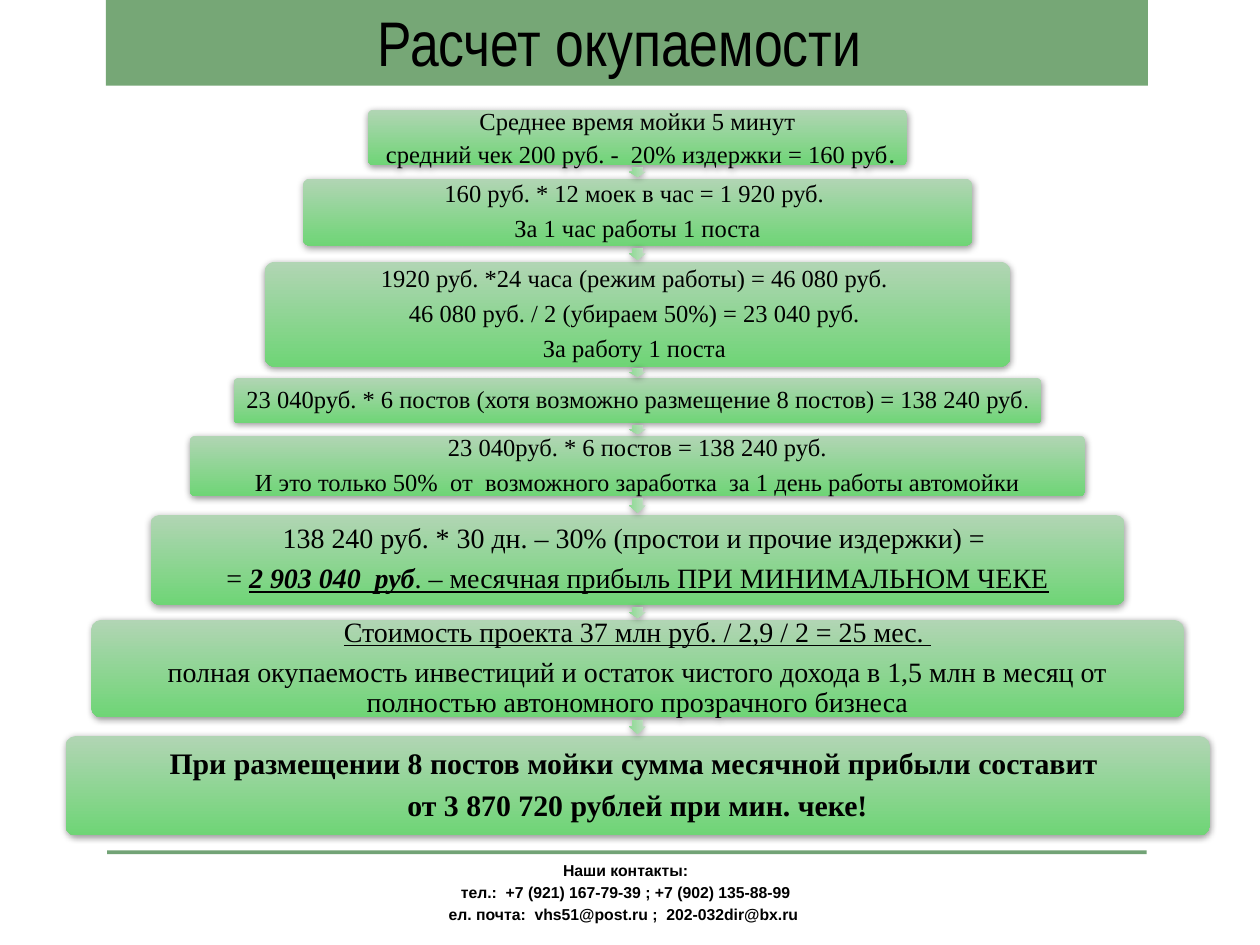
from lxml import etree
from pptx import Presentation
from pptx.dml.color import RGBColor
from pptx.enum.shapes import MSO_SHAPE
from pptx.enum.text import MSO_ANCHOR, MSO_AUTO_SIZE, PP_ALIGN
from pptx.oxml.ns import qn
from pptx.util import Inches, Pt

CENTER = PP_ALIGN.CENTER
MIDDLE, BOTTOM = MSO_ANCHOR.MIDDLE, MSO_ANCHOR.BOTTOM
NO_AUTOFIT = MSO_AUTO_SIZE.NONE
RECTANGLE, ROUNDED = MSO_SHAPE.RECTANGLE, MSO_SHAPE.ROUNDED_RECTANGLE
RIGHT_ARROW = MSO_SHAPE.RIGHT_ARROW

WIDTH, HEIGHT = Inches(10), Inches(7.5)
AXIS = 50.6  # centre of the pyramid, percent of the slide width
ARROW_BREADTH = 0.13  # inches
COLORS = {
    "text": "000000", "title": "76A776", "rule": "72A376",
    "step_top": "B1D5B4", "step_bottom": "6FD576",
    "arrow_top": "C2DDC4", "arrow_bottom": "8CDA92",
}
PLAIN = {}
UNDERLINED = {"underline": True}
BOLD = {"bold": True}
TOTAL = {"bold": True, "italic": True, "underline": True}

# top, height and width in percent of the slide; text size; paragraphs of runs
STEPS = [
    (11.6, 5.9, 42.8, 14, [
        [("Среднее время мойки 5 минут", PLAIN)],
        [(" средний чек 200 руб. -  20% издержки = 160 руб", PLAIN),
         (".", {"size": Pt(16)})]]),
    (18.9, 7.1, 53.1, 14, [
        [("160 руб. * 12 моек в час = 1 920 руб. ", PLAIN)],
        [("За 1 час работы 1 поста", PLAIN)]]),
    (27.7, 11.1, 59.2, 14, [
        [("1920 руб. *24 часа (режим работы) = 46 080 руб. ", PLAIN)],
        [("46 080 руб. / 2 (убираем 50%) = 23 040 руб. ", PLAIN)],
        [("За работу 1 поста ", PLAIN)]]),
    (40, 4.8, 64.1, 14, [
        [("23 040руб. * 6 постов (хотя возможно размещение 8 постов)"
          " = 138 240 руб", PLAIN), (".", {"size": Pt(11)})]]),
    (46.1, 6.4, 71.1, 14, [
        [("23 040руб. * 6 постов = 138 240 руб.", PLAIN)],
        [("И это только 50%  от  возможного заработка"
          "  за 1 день работы автомойки", PLAIN)]]),
    (54.5, 9.5, 77.3, 16, [
        [("138 240 руб. * 30 дн. – 30% (простои и прочие издержки) = ", PLAIN)],
        [("= ", PLAIN), ("2 903 040  руб", TOTAL),
         (". – месячная прибыль ПРИ МИНИМАЛЬНОМ ЧЕКЕ", UNDERLINED)]]),
    (65.6, 10.3, 86.7, 16, [
        [("Стоимость проекта 37 млн руб. / 2,9 / 2 = 25 мес. ", UNDERLINED)],
        [("полная окупаемость инвестиций и остаток чистого дохода в 1,5 млн"
          " в месяц от полностью автономного прозрачного бизнеса", PLAIN)]]),
    (77.9, 10.5, 90.8, 17, [
        [("При размещении 8 постов мойки сумма месячной прибыли составит ",
          BOLD)],
        [("от 3 870 720 рублей при мин. чеке!", BOLD)]]),
]
CONTACTS = [
    [("Наши контакты:", BOLD)],
    [("тел.:  +7 (921) 167-79-39 ; +7 (902) 135-88-99", BOLD)],
    [("ел. почта:  vhs51@post.ru ;  202-032dir@bx.ru ", BOLD)],
]


def color(name):
    return RGBColor.from_string(COLORS[name])


def share(left, top, width, height):
    """Turn percentages of the slide into lengths."""
    return [int(part * whole / 100) for part, whole in
            zip((left, top, width, height), (WIDTH, HEIGHT) * 2)]


def write(frame, paragraphs, font, size, line=None, before=0, after=0):
    """Fill a text frame with centred paragraphs of (text, format) runs."""
    frame.word_wrap = True
    for index, runs in enumerate(paragraphs):
        para = frame.paragraphs[0] if index == 0 else frame.add_paragraph()
        para.alignment = CENTER
        para.line_spacing = line
        para.space_before, para.space_after = Pt(before), Pt(after)
        for text, look in runs:
            span = para.add_run()
            span.text = text
            span.font.name, span.font.size = font, Pt(size)
            span.font.color.rgb = color("text")
            for name, value in look.items():
                setattr(span.font, name, value)


def add_glossy(page, preset, place, role):
    """Add a shape with a vertical gradient and a soft shadow."""
    shape = page.shapes.add_shape(preset, *place)
    shape.line.fill.background()
    shape.fill.gradient()
    shape.fill.gradient_angle = 270
    for stop, position, end in zip(shape.fill.gradient_stops, (0, 1),
                                   ("top", "bottom")):
        stop.position = position
        stop.color.rgb = color(f"{role}_{end}")
    shape.shadow.inherit = False
    effects = shape.element.spPr.find(qn("a:effectLst"))
    shadow = etree.SubElement(effects, qn("a:outerShdw"), blurRad=str(Pt(4)),
                              dist=str(Pt(1)), dir="5280000", rotWithShape="0")
    tint = etree.SubElement(shadow, qn("a:srgbClr"), val=COLORS["text"])
    etree.SubElement(tint, qn("a:alpha"), val="40000")
    return shape


def add_step(page, top, height, width, size, paragraphs, spaced):
    place = share(AXIS - width / 2, top, width, height)
    box = add_glossy(page, ROUNDED, place, "step")
    box.adjustments[0] = 0.1
    frame = box.text_frame
    frame.vertical_anchor = MIDDLE
    frame.margin_left = frame.margin_right = Pt(size * 0.3)
    frame.margin_top = frame.margin_bottom = Inches(0.02)
    spacing = {"line": 0.9, "after": size * 0.35} if spaced else {}
    write(frame, paragraphs, "Times New Roman", size, **spacing)


def add_arrow(page, start, end):
    """Point down in the gap between two heights given in percent."""
    length = int((end - start) * 0.75 * HEIGHT / 100)
    breadth = Inches(ARROW_BREADTH)
    center_x = int(AXIS * WIDTH / 100)
    center_y = int((start + end) / 2 * HEIGHT / 100)
    place = (center_x - length // 2, center_y - breadth // 2, length, breadth)
    arrow = add_glossy(page, RIGHT_ARROW, place, "arrow")
    arrow.adjustments[0], arrow.adjustments[1] = 0.6, 0.5
    arrow.rotation = 90


def add_title(page, text):
    title = page.shapes.title
    title.left, title.top, title.width, title.height = share(8.4, 0, 82.7, 9.07)
    title.fill.solid()
    title.fill.fore_color.rgb = color("title")
    title.text_frame.auto_size = NO_AUTOFIT
    title.text_frame.vertical_anchor = BOTTOM
    write(title.text_frame, [[(text, PLAIN)]], "Arial Narrow", 36)


def add_footer(page):
    rule = page.shapes.add_shape(RECTANGLE, *share(8.5, 90, 82.5, 0.4))
    rule.fill.solid()
    rule.fill.fore_color.rgb = color("rule")
    rule.line.fill.background()
    rule.shadow.inherit = False
    box = page.shapes.add_textbox(*share(8.3, 90.4, 82.7, 9.6))
    write(box.text_frame, CONTACTS, "Arial", 9, before=1.8)


def main():
    deck = Presentation()
    deck.slide_width, deck.slide_height = WIDTH, HEIGHT
    page = deck.slides.add_slide(deck.slide_layouts[5])
    add_title(page, "Расчет окупаемости ")
    for index, step in enumerate(STEPS):
        add_step(page, *step, spaced=index > 0)
    for upper, lower in zip(STEPS, STEPS[1:]):
        add_arrow(page, upper[0] + upper[1], lower[0])
    add_footer(page)
    deck.save("out.pptx")


if __name__ == "__main__":
    main()
